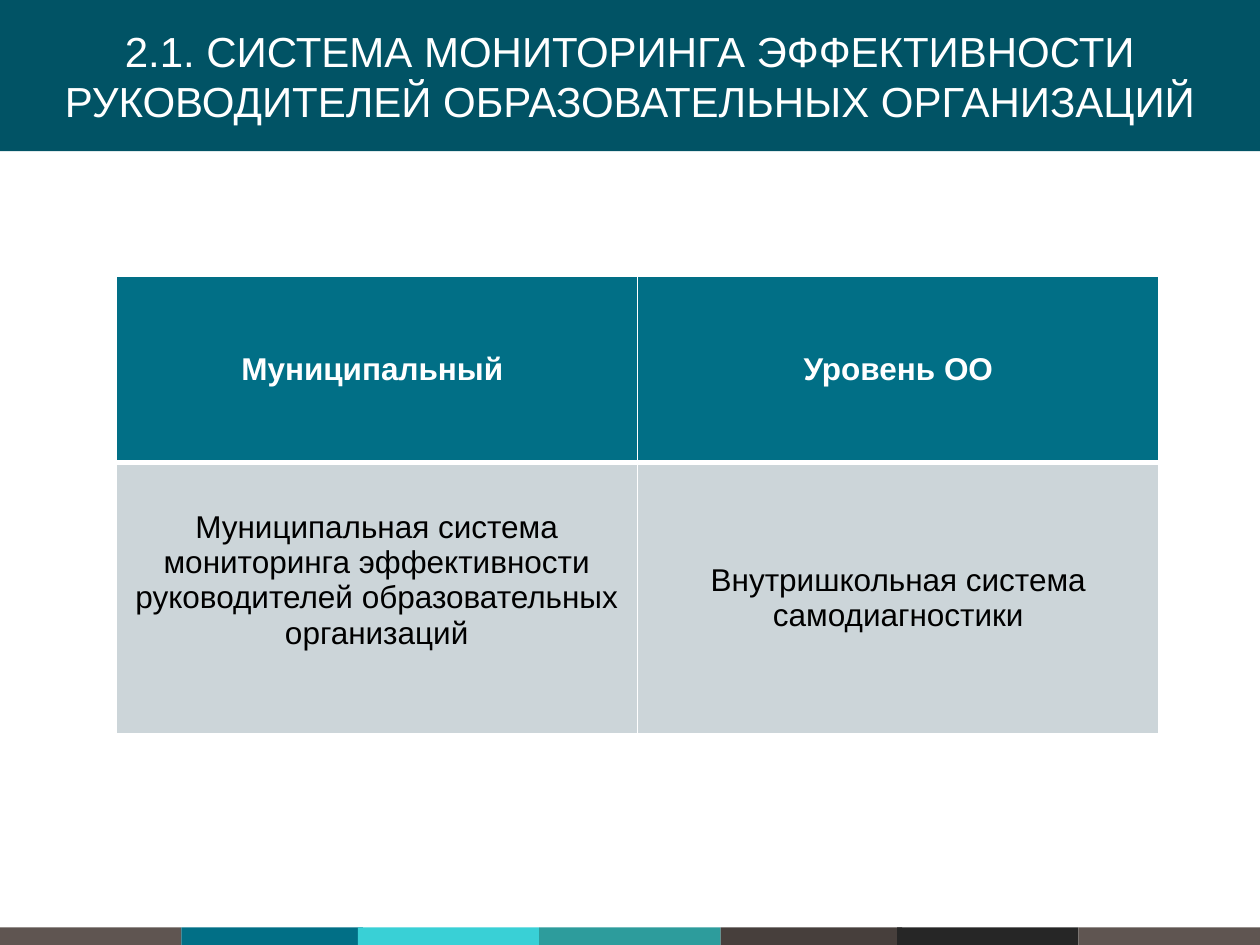
from lxml import etree
from pptx import Presentation
from pptx import util as u
from pptx.dml.color import RGBColor
from pptx.enum import shapes, text
from pptx.oxml.ns import qn

WIDTH, HEIGHT = 10, 7.5
COLORS = {
    "title": "015365", "header": "016F86", "body": "CCD5D9",
    "white": "FFFFFF", "black": "000000", "taupe": "5F5551",
    "aqua": "39D0D6", "teal": "2D9C9C", "brown": "473F3C", "dark": "262626",
}
STRIP = ["taupe", "header", "aqua", "teal", "brown", "dark", "taupe"]
TITLE = "2.1. СИСТЕМА МОНИТОРИНГА ЭФФЕКТИВНОСТИ РУКОВОДИТЕЛЕЙ ОБРАЗОВАТЕЛЬНЫХ ОРГАНИЗАЦИЙ"
ROWS = [
    ["Муниципальный ", "Уровень ОО"],
    ["Муниципальная система мониторинга эффективности руководителей образовательных организаций",
     "Внутришкольная система самодиагностики"],
]
ROW_HEIGHTS = [1.48, 2.15]


def rgb(name):
    return RGBColor.from_string(COLORS[name])


def write(tf, content, size, color, bold=False):
    tf.text = content
    tf.word_wrap = True
    p = tf.paragraphs[0]
    p.alignment = text.PP_ALIGN.CENTER
    font = p.runs[0].font
    font.name, font.size, font.bold = "Arial", u.Pt(size), bold
    font.color.rgb = rgb(color)


def add_bar(slide, left, top, width, height, color):
    sp = slide.shapes.add_shape(
        shapes.MSO_SHAPE.RECTANGLE, *map(u.Inches, (left, top, width, height)))
    sp.shadow.inherit = False
    sp.fill.solid()
    sp.fill.fore_color.rgb = rgb(color)
    sp.line.fill.background()
    return sp


def add_strip(slide):
    width, height, overlap = 1.44, 0.14, 0.04
    for i, color in enumerate(STRIP):
        left = i * width - (i + 1) // 3 * overlap
        add_bar(slide, left, HEIGHT - height, width, height, color)


def add_title(slide):
    sp = add_bar(slide, 0, 0, WIDTH, HEIGHT * 0.16, "title")
    sp.text_frame.vertical_anchor = text.MSO_ANCHOR.MIDDLE
    write(sp.text_frame, TITLE, 24, "white")


def set_borders(cell, **widths):
    tc_pr = cell._tc.get_or_add_tcPr()
    for side in "LRTB":
        ln = etree.SubElement(tc_pr, qn(f"a:ln{side}"), w=str(u.Pt(widths.get(side, 1))))
        fill = etree.SubElement(ln, qn("a:solidFill"))
        etree.SubElement(fill, qn("a:srgbClr"), val=COLORS["white"])


def add_levels_table(slide):
    frame = slide.shapes.add_table(
        2, 2, *map(u.Inches, (0.92, 2.19, 8.28, sum(ROW_HEIGHTS))))
    table = frame.table
    for r, row in enumerate(ROWS):
        table.rows[r].height = u.Inches(ROW_HEIGHTS[r])
        header = r == 0
        for c, content in enumerate(row):
            cell = table.cell(r, c)
            set_borders(cell, **({"B": 3} if header else {"T": 3}))
            cell.fill.solid()
            cell.fill.fore_color.rgb = rgb("header" if header else "body")
            cell.vertical_anchor = text.MSO_ANCHOR.MIDDLE
            write(cell.text_frame, content, 18, "white" if header else "black", header)
    table.cell(1, 0).margin_bottom = u.Inches(0.33)


def main():
    prs = Presentation()
    prs.slide_width, prs.slide_height = u.Inches(WIDTH), u.Inches(HEIGHT)
    slide = prs.slides.add_slide(prs.slide_layouts[6])
    add_strip(slide)
    add_title(slide)
    add_levels_table(slide)
    prs.save("out.pptx")


if __name__ == "__main__":
    main()
